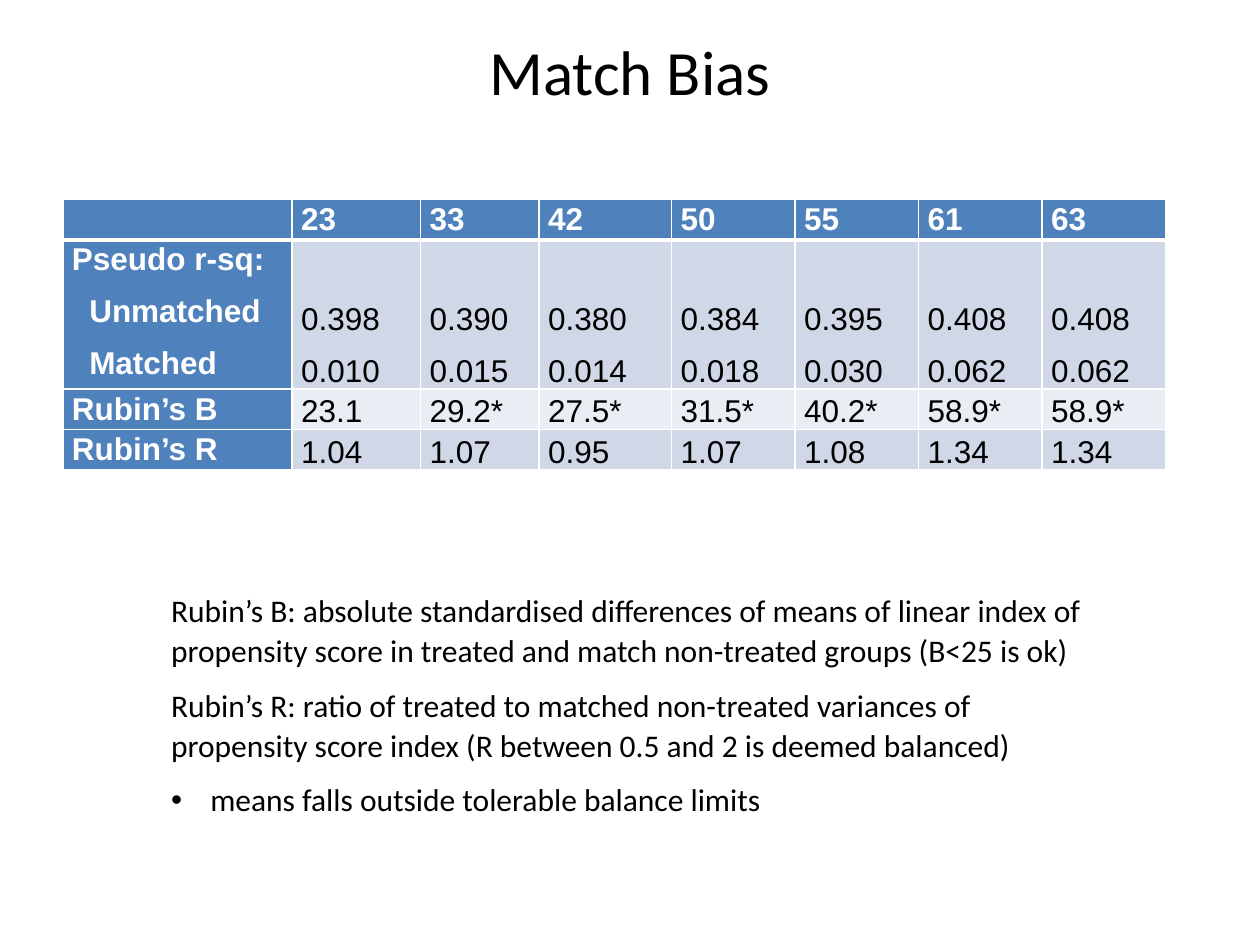
from dataclasses import dataclass

from lxml.etree import SubElement
from pptx import Presentation
from pptx.dml.color import RGBColor
from pptx.enum.text import MSO_ANCHOR, MSO_AUTO_SIZE, PP_ALIGN
from pptx.oxml import parse_xml
from pptx.oxml.ns import nsdecls, qn
from pptx.util import Cm, Pt


@dataclass(frozen=True)
class Theme:
    heading_font: str = "Calibri"
    table_font: str = "Arial"
    title_size: int = 36
    body_size: int = 18
    black: str = "000000"
    white: str = "FFFFFF"
    header: str = "4F81BD"
    band_dark: str = "D0D8E8"
    band_light: str = "E9EDF4"


THEME = Theme()

TITLE = "Match Bias"
HEADINGS = ["", "23", "33", "42", "50", "55", "61", "63"]
UNMATCHED = ["0.398", "0.390", "0.380", "0.384", "0.395", "0.408", "0.408"]
MATCHED = ["0.010", "0.015", "0.014", "0.018", "0.030", "0.062", "0.062"]
RUBIN_B = ["23.1", "29.2*", "27.5*", "31.5*", "40.2*", "58.9*", "58.9*"]
RUBIN_R = ["1.04", "1.07", "0.95", "1.07", "1.08", "1.34", "1.34"]
ROWS = [
    HEADINGS,
    ["Pseudo r-sq:\nUnmatched\nMatched"]
    + [f"{before}\n{after}" for before, after in zip(UNMATCHED, MATCHED)],
    ["Rubin’s B"] + RUBIN_B,
    ["Rubin’s R"] + RUBIN_R,
]
NOTES = [
    "Rubin’s B: absolute standardised differences of means of linear index of "
    "propensity score in treated and match non-treated groups (B<25 is ok)",
    "Rubin’s R: ratio of treated to matched non-treated variances of "
    "propensity score index (R between 0.5 and 2 is deemed balanced)",
]
BULLET_NOTE = "means falls outside tolerable balance limits"

COLUMN_WIDTHS = [4.62, 2.59, 2.39, 2.67, 2.49, 2.49, 2.49, 2.49]
ROW_HEIGHTS = [0.66, 2.8, 0.66, 0.66]


def style_font(paragraph, name, size, color, bold=False):
    font = paragraph.font
    font.name = name
    font.size = Pt(size)
    font.bold = bold
    font.color.rgb = RGBColor.from_string(color)


def space_lines(paragraph):
    paragraph.line_spacing = 1.07
    paragraph.space_after = Pt(8)


def indent(paragraph, left, first_line=0):
    properties = paragraph._p.get_or_add_pPr()
    properties.set("marL", str(Cm(left)))
    properties.set("indent", str(Cm(first_line)))
    return properties


def add_border(cell, header_row):
    properties = cell._tc.get_or_add_tcPr()
    for position, side in enumerate("LRTB"):
        width = Pt(3 if header_row and side == "B" else 1)
        properties.insert(position, parse_xml(
            f'<a:ln{side} {nsdecls("a")} w="{width}"><a:solidFill>'
            f'<a:srgbClr val="{THEME.white}"/></a:solidFill></a:ln{side}>'))


def fill_cell(cell, text, row, column):
    is_header = row == 0 or column == 0
    band = THEME.band_dark if row % 2 else THEME.band_light
    cell.text = text
    cell.margin_left = cell.margin_right = Cm(0.18)
    cell.margin_top = cell.margin_bottom = 0
    cell.vertical_anchor = MSO_ANCHOR.TOP if is_header else MSO_ANCHOR.BOTTOM
    cell.fill.solid()
    cell.fill.fore_color.rgb = RGBColor.from_string(THEME.header if is_header else band)
    add_border(cell, row == 0)
    for index, paragraph in enumerate(cell.text_frame.paragraphs):
        if column == 0 and index > 0:
            indent(paragraph, 0.35)
        space_lines(paragraph)
        style_font(paragraph, THEME.table_font, THEME.body_size,
                   THEME.white if is_header else THEME.black, is_header)


def add_title(slide):
    shape = slide.shapes.add_textbox(Cm(1.27), Cm(0.74), Cm(22.86), Cm(1.37))
    frame = shape.text_frame
    frame.word_wrap = True
    frame.vertical_anchor = MSO_ANCHOR.MIDDLE
    frame.text = TITLE
    paragraph = frame.paragraphs[0]
    paragraph.alignment = PP_ALIGN.CENTER
    style_font(paragraph, THEME.heading_font, THEME.title_size, THEME.black)


def add_bias_table(slide):
    table = slide.shapes.add_table(
        len(ROWS), len(HEADINGS), Cm(1.27), Cm(4.02),
        Cm(sum(COLUMN_WIDTHS)), Cm(sum(ROW_HEIGHTS))).table
    table.first_row = False
    table.horz_banding = False
    for column, width in zip(table.columns, COLUMN_WIDTHS):
        column.width = Cm(width)
    for row, height in zip(table.rows, ROW_HEIGHTS):
        row.height = Cm(height)
    for row, texts in enumerate(ROWS):
        for column, text in enumerate(texts):
            fill_cell(table.cell(row, column), text, row, column)


def add_notes(slide):
    shape = slide.shapes.add_textbox(Cm(3.2), Cm(11.73), Cm(19), Cm(4.9))
    frame = shape.text_frame
    frame.word_wrap = True
    frame.auto_size = MSO_AUTO_SIZE.SHAPE_TO_FIT_TEXT
    frame.text = "\n".join(NOTES + [BULLET_NOTE])
    properties = indent(frame.paragraphs[-1], 0.79, -0.79)
    SubElement(properties, qn("a:buFont"), typeface=THEME.table_font)
    SubElement(properties, qn("a:buChar"), char="•")
    for paragraph in frame.paragraphs:
        space_lines(paragraph)
        style_font(paragraph, THEME.heading_font, THEME.body_size, THEME.black)


def main():
    presentation = Presentation()
    presentation.slide_width = Cm(25.4)
    presentation.slide_height = Cm(19.05)
    slide = presentation.slides.add_slide(presentation.slide_layouts[6])
    add_title(slide)
    add_bias_table(slide)
    add_notes(slide)
    presentation.save("out.pptx")


if __name__ == "__main__":
    main()
